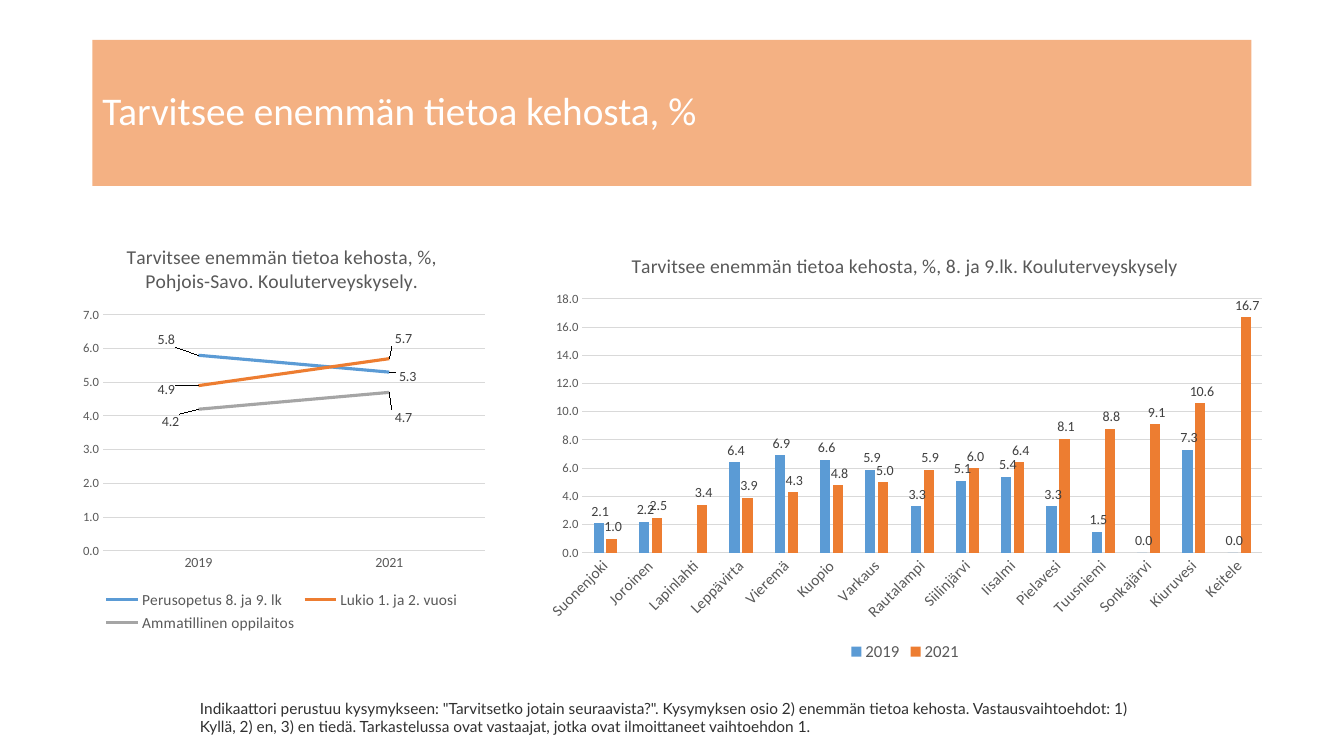
import dataclasses
import typing

import lxml.etree
import pptx
import pptx.chart.data
import pptx.dml.color
import pptx.enum.chart
import pptx.enum.shapes
import pptx.enum.text
import pptx.oxml.ns
import pptx.util

EMU_PER_PX = 9525
NUMBER_FORMAT = "#\\ ##0.0"
LABEL_POSITION = pptx.enum.chart.XL_LABEL_POSITION
CHART_TYPE = pptx.enum.chart.XL_CHART_TYPE


@dataclasses.dataclass(frozen=True)
class Theme:
    font: str = "Calibri"
    note_font: str = "Lato"
    banner: str = "F4B183"
    white: str = "FFFFFF"
    note: str = "303030"
    axis_text: str = "595959"
    label_text: str = "404040"
    grid: str = "D9D9D9"
    series: tuple[str, ...] = ("5B9BD5", "ED7D31", "A5A5A5")
    banner_size: int = 28
    chart_title_size: int = 14
    note_size: int = 11
    value_size: int = 9
    label_size: int = 10


THEME = Theme()


class Box(typing.NamedTuple):
    left: int
    top: int
    width: int
    height: int


class Series(typing.NamedTuple):
    name: str
    values: tuple[float | None, ...]
    label_shifts: tuple[tuple[float, float], ...] = ()


@dataclasses.dataclass(frozen=True)
class ChartItem:
    kind: typing.Any
    box: Box
    plot: tuple[float, float, float, float]
    title: str
    categories: tuple[str, ...]
    series: tuple[Series, ...]
    category_size: int
    legend_size: int
    label_position: typing.Any
    top_value: int
    step: int
    category_turn: int = 0


CHARTS = (
    ChartItem(
        CHART_TYPE.LINE, Box(68, 215, 401, 391), (0.075, 0.217, 0.907, 0.575),
        "Tarvitsee enemmän tietoa kehosta, %, Pohjois-Savo. Kouluterveyskysely.",
        ("2019", "2021"),
        (
            Series("Perusopetus 8. ja 9. lk", (5.8, 5.3), ((-0.08, -0.01), (0.04, 0.04))),
            Series("Lukio 1. ja 2. vuosi", (4.9, 5.7), ((-0.08, 0.04), (0.03, -0.02))),
            Series("Ammatillinen oppilaitos", (4.2, 4.7), ((-0.07, 0.06), (0.03, 0.09))),
        ),
        10, 11, LABEL_POSITION.ABOVE, 7, 1,
    ),
    ChartItem(
        CHART_TYPE.COLUMN_CLUSTERED, Box(508, 224, 708, 410), (0.066, 0.148, 0.914, 0.59),
        "Tarvitsee enemmän tietoa kehosta, %, 8. ja 9.lk. Kouluterveyskysely",
        ("Suonenjoki", "Joroinen", "Lapinlahti", "Leppävirta", "Vieremä", "Kuopio",
         "Varkaus", "Rautalampi", "Siilinjärvi", "Iisalmi", "Pielavesi", "Tuusniemi",
         "Sonkajärvi", "Kiuruvesi", "Keitele"),
        (
            Series("2019", (2.1, 2.2, None, 6.4, 6.9, 6.6, 5.9, 3.3,
                            5.1, 5.4, 3.3, 1.5, 0, 7.3, 0)),
            Series("2021", (1, 2.5, 3.4, 3.9, 4.3, 4.8, 5, 5.9,
                            6, 6.4, 8.1, 8.8, 9.1, 10.6, 16.7)),
        ),
        11, 12, LABEL_POSITION.OUTSIDE_END, 18, 2, -45,
    ),
)


def place(box: Box) -> tuple[int, ...]:
    return tuple(length * EMU_PER_PX for length in box)


def rgb(color: str) -> pptx.dml.color.RGBColor:
    return pptx.dml.color.RGBColor.from_string(color)


def assign(target: typing.Any, formats: dict[str, typing.Any]) -> None:
    for name, value in formats.items():
        setattr(target, name, value)


def style_font(font: typing.Any, size: int, color: str, name: str = THEME.font) -> None:
    assign(font, {"size": pptx.util.Pt(size), "name": name, "bold": False})
    font.color.rgb = rgb(color)


def style_line(line: typing.Any, color: str, width: float) -> None:
    line.color.rgb = rgb(color)
    line.width = pptx.util.Pt(width)


def write_text(shape: typing.Any, text: str, size: int, color: str, font: str) -> typing.Any:
    shape.text_frame.word_wrap = True
    para = shape.text_frame.paragraphs[0]
    para.alignment = pptx.enum.text.PP_ALIGN.LEFT
    span = para.add_run()
    span.text = text
    style_font(span.font, size, color, font)
    return para


def make_layout(values: dict[str, typing.Any]) -> typing.Any:
    layout = lxml.etree.Element(pptx.oxml.ns.qn("c:layout"))
    manual = lxml.etree.SubElement(layout, pptx.oxml.ns.qn("c:manualLayout"))
    for tag, value in values.items():
        lxml.etree.SubElement(manual, pptx.oxml.ns.qn(f"c:{tag}")).set("val", str(value))
    return layout


def place_plot(chart: typing.Any, plot: tuple[float, ...]) -> None:
    area = chart.element.xpath("c:chart/c:plotArea")[0]
    for old in area.xpath("c:layout"):
        area.remove(old)
    modes = {"layoutTarget": "inner", "xMode": "edge", "yMode": "edge"}
    area.insert(0, make_layout(modes | dict(zip("xywh", plot))))


def style_axes(chart: typing.Any, item: ChartItem) -> None:
    no_tick = pptx.enum.chart.XL_TICK_MARK.NONE
    sizes = {chart.category_axis: item.category_size, chart.value_axis: THEME.value_size}
    for axis, size in sizes.items():
        assign(axis, {"major_tick_mark": no_tick, "minor_tick_mark": no_tick})
        style_font(axis.tick_labels.font, size, THEME.axis_text)
    style_line(chart.category_axis.format.line, THEME.grid, 0.75)
    assign(chart.value_axis, {"minimum_scale": 0, "maximum_scale": item.top_value,
                              "major_unit": item.step, "has_major_gridlines": True})
    assign(chart.value_axis.tick_labels,
           {"number_format": NUMBER_FORMAT, "number_format_is_linked": False})
    chart.value_axis.format.line.fill.background()
    style_line(chart.value_axis.major_gridlines.format.line, THEME.grid, 0.75)
    if item.category_turn:
        body = chart.element.xpath(".//c:catAx/c:txPr/a:bodyPr")[0]
        body.set("rot", str(item.category_turn * 60000))


def style_series(series: typing.Any, item: ChartItem, data: Series, color: str) -> None:
    if item.kind == CHART_TYPE.LINE:
        style_line(series.format.line, color, 2.25)
        series.smooth = False
        series.marker.style = pptx.enum.chart.XL_MARKER_STYLE.NONE
    else:
        series.format.fill.solid()
        series.format.fill.fore_color.rgb = rgb(color)
        series.invert_if_negative = False
    labels = series.data_labels
    assign(labels, {"show_value": True, "position": item.label_position,
                    "number_format": NUMBER_FORMAT, "number_format_is_linked": False})
    style_font(labels.font, THEME.label_size, THEME.label_text)
    for index, shift in enumerate(data.label_shifts):
        label = series.points[index].data_label
        style_font(label.font, THEME.label_size, THEME.label_text)
        label.position = item.label_position
        node = labels._element.xpath(f"c:dLbl[c:idx/@val='{index}']")[0]
        node.insert(1, make_layout(dict(zip("xy", shift))))


def add_chart(page: typing.Any, item: ChartItem) -> None:
    data = pptx.chart.data.CategoryChartData(number_format=NUMBER_FORMAT)
    data.categories = item.categories
    for series in item.series:
        data.add_series(series.name, series.values)
    chart = page.shapes.add_chart(item.kind, *place(item.box), data).chart
    style_font(chart.font, THEME.label_size, THEME.axis_text)
    assign(chart, {"has_title": True, "has_legend": True})
    chart.chart_title.include_in_layout = False
    chart.chart_title.text_frame.text = item.title
    title_span = chart.chart_title.text_frame.paragraphs[0].runs[0]
    style_font(title_span.font, THEME.chart_title_size, THEME.axis_text)
    assign(chart.legend, {"position": pptx.enum.chart.XL_LEGEND_POSITION.BOTTOM,
                          "include_in_layout": False})
    style_font(chart.legend.font, item.legend_size, THEME.axis_text)
    plot = chart.plots[0]
    plot.vary_by_categories = False
    if item.kind == CHART_TYPE.COLUMN_CLUSTERED:
        assign(plot, {"gap_width": 219, "overlap": -27})
    style_axes(chart, item)
    for series, values, color in zip(plot.series, item.series, THEME.series):
        style_series(series, item, values, color)
    place_plot(chart, item.plot)


def main() -> None:
    deck = pptx.Presentation()
    assign(deck, {"slide_width": 1280 * EMU_PER_PX, "slide_height": 720 * EMU_PER_PX})
    page = deck.slides.add_slide(deck.slide_layouts[6])

    # Title banner
    banner = page.shapes.add_shape(
        pptx.enum.shapes.MSO_SHAPE.RECTANGLE, *place(Box(88, 38, 1104, 139)))
    banner.shadow.inherit = False
    banner.fill.solid()
    banner.fill.fore_color.rgb = rgb(THEME.banner)
    banner.line.fill.background()
    banner.text_frame.vertical_anchor = pptx.enum.text.MSO_ANCHOR.MIDDLE
    para = write_text(banner, "Tarvitsee enemmän tietoa kehosta, %",
                      THEME.banner_size, THEME.white, THEME.font)
    para.line_spacing = 0.9

    # Charts
    for item in CHARTS:
        add_chart(page, item)

    # Note on the indicator
    note = page.shapes.add_textbox(*place(Box(181, 661, 918, 45)))
    write_text(
        note,
        'Indikaattori perustuu kysymykseen: "Tarvitsetko jotain seuraavista?". '
        "Kysymyksen osio 2) enemmän tietoa kehosta. Vastausvaihtoehdot: 1) Kyllä, 2) en, "
        "3) en tiedä. Tarkastelussa ovat vastaajat, jotka ovat ilmoittaneet vaihtoehdon 1.",
        THEME.note_size, THEME.note, THEME.note_font)
    note.text_frame.auto_size = pptx.enum.text.MSO_AUTO_SIZE.SHAPE_TO_FIT_TEXT

    deck.save("out.pptx")


if __name__ == "__main__":
    main()
